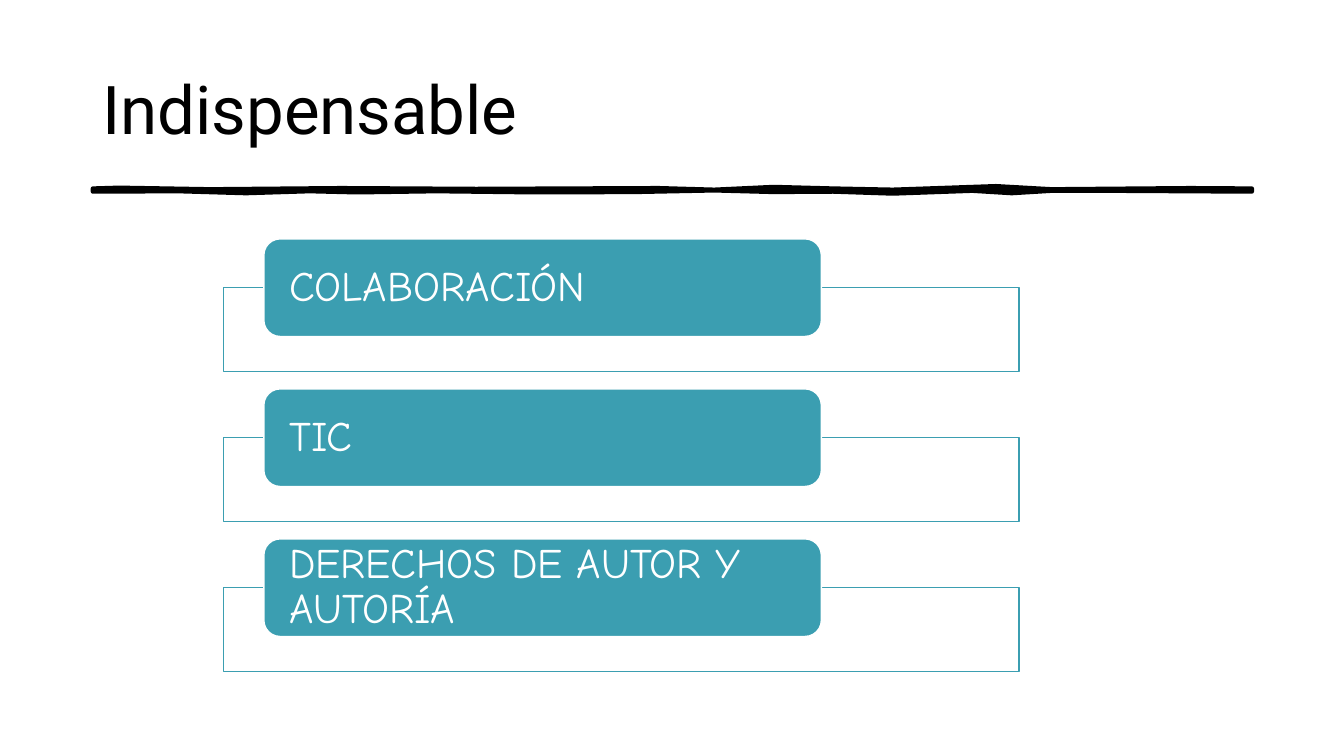
"""Build a slide with a title, a hand-drawn rule and three labelled boxes."""
from dataclasses import dataclass

from pptx import Presentation
from pptx.dml.color import RGBColor
from pptx.enum.shapes import MSO_SHAPE
from pptx.enum.text import MSO_ANCHOR, PP_ALIGN
from pptx.shapes.autoshape import Shape
from pptx.slide import Slide
from pptx.util import Cm, Pt

RECT = MSO_SHAPE.RECTANGLE
ROUND = MSO_SHAPE.ROUNDED_RECTANGLE
MIDDLE = MSO_ANCHOR.MIDDLE
LEFT = PP_ALIGN.LEFT

BLACK = RGBColor(0x00, 0x00, 0x00)
WHITE = RGBColor(0xFF, 0xFF, 0xFF)
TEAL = RGBColor(0x3B, 0x9E, 0xB1)

TOP = 6.02
PITCH = 3.78
LABELS = ["COLABORACIÓN", "TIC", "DERECHOS DE AUTOR Y AUTORÍA"]

UPPER = [(2.34, 4.75), (3, 4.73), (5.3, 4.77), (8.6, 4.74), (12, 4.76),
         (16.6, 4.74), (18, 4.78), (19.5, 4.71), (21, 4.75), (22.5, 4.78),
         (25.1, 4.69), (26.5, 4.77), (30, 4.74), (31.55, 4.75)]
LOWER = [(31.55, 4.83), (28, 4.81), (26.5, 4.81), (25.5, 4.87), (24.5, 4.81),
         (22.5, 4.88), (21, 4.83), (19.5, 4.84), (18, 4.8), (16, 4.84),
         (13.5, 4.85), (11, 4.82), (9, 4.85), (7.8, 4.82), (6.2, 4.87),
         (4.5, 4.82), (2.34, 4.83)]


@dataclass
class Box:
    kind: MSO_SHAPE
    left: float
    drop: float
    width: float
    height: float
    fill: RGBColor
    line: RGBColor


FRAME = Box(RECT, 5.64, 1.23, 20.04, 2.11, WHITE, TEAL)
BAR = Box(ROUND, 6.65, 0, 14.05, 2.46, TEAL, WHITE)


def paint(shape: Shape, fill: RGBColor, line: RGBColor, width: float) -> None:
    shape.shadow.inherit = False
    shape.fill.solid()
    shape.fill.fore_color.rgb = fill
    shape.line.color.rgb = line
    shape.line.width = Pt(width)


def draw_box(slide: Slide, box: Box, top: float) -> Shape:
    shape = slide.shapes.add_shape(box.kind, Cm(box.left), Cm(top + box.drop),
                                   Cm(box.width), Cm(box.height))
    paint(shape, box.fill, box.line, 1)
    return shape


def write(shape: Shape, text: str, font: str, size: float,
          color: RGBColor, inset: float) -> None:
    frame = shape.text_frame
    frame.word_wrap = True
    frame.vertical_anchor = MIDDLE
    frame.margin_left = frame.margin_right = Cm(inset)
    frame.margin_top = frame.margin_bottom = Cm(0)
    para = frame.paragraphs[0]
    para.alignment = LEFT
    para.line_spacing = 0.9
    run = para.add_run()
    run.text = text
    run.font.name = font
    run.font.size = Pt(size)
    run.font.color.rgb = color


def draw_rule(slide: Slide) -> None:
    start, *rest = [(Cm(x), Cm(y)) for x, y in UPPER + LOWER]
    pen = slide.shapes.build_freeform(*start)
    pen.add_line_segments(rest, close=True)
    paint(pen.convert_to_shape(), BLACK, BLACK, 3)


def main() -> None:
    deck = Presentation()
    deck.slide_width = Cm(33.87)
    deck.slide_height = Cm(19.05)
    slide = deck.slides.add_slide(deck.slide_layouts[6])

    draw_rule(slide)
    title = slide.shapes.add_textbox(Cm(2.33), Cm(1.01), Cm(29.21), Cm(3.68))
    write(title, "Indispensable", "Roboto", 48, BLACK, 0.25)

    for row, label in enumerate(LABELS):
        top = TOP + row * PITCH
        draw_box(slide, FRAME, top)
        bar = draw_box(slide, BAR, top)
        write(bar, label, "Comic Neue", 30, WHITE, 0.52)

    deck.save("out.pptx")


if __name__ == "__main__":
    main()
